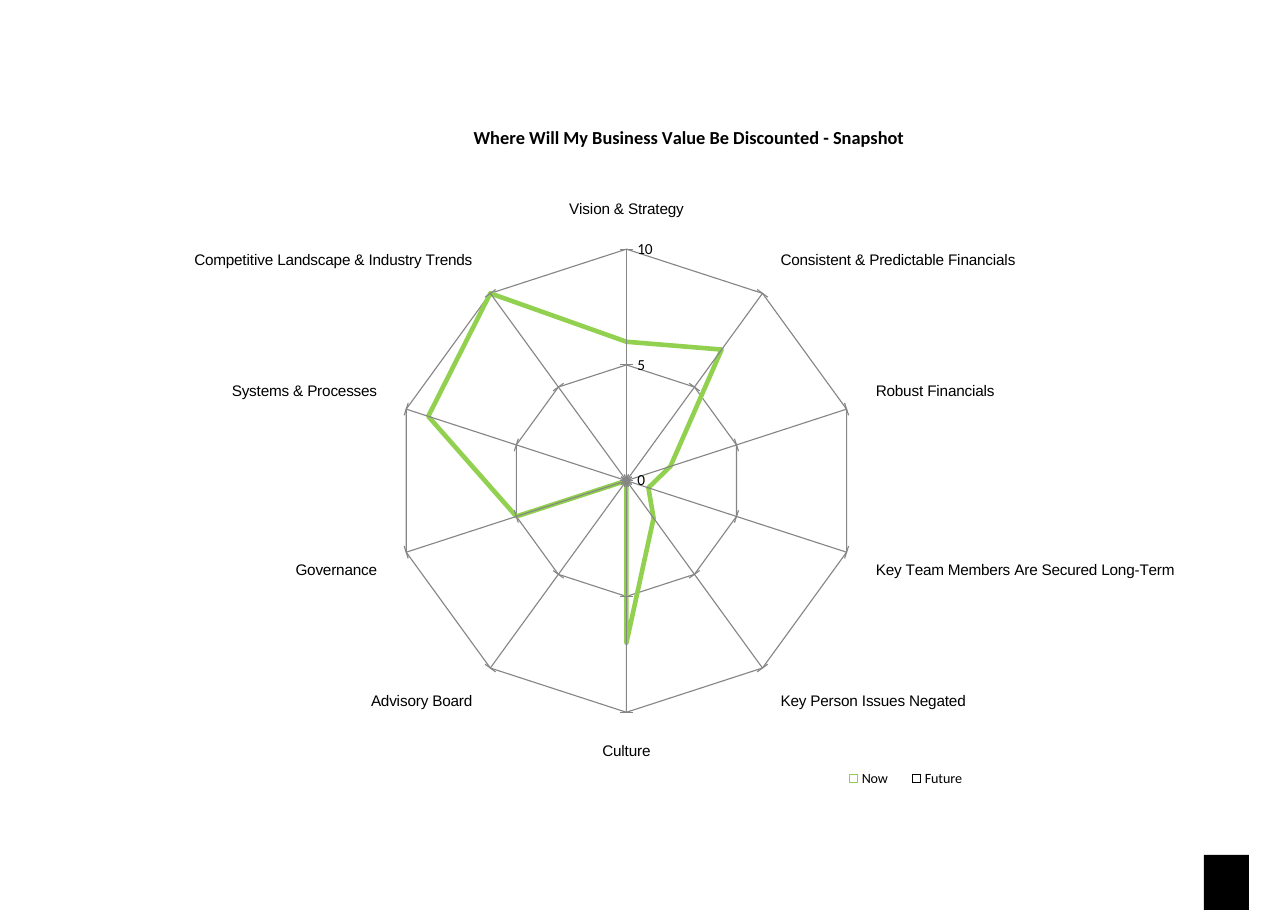
from lxml import etree
from pptx import Presentation
from pptx import util as u
from pptx.chart import data as chart_data
from pptx.dml import color
from pptx.enum import chart as charts, shapes
from pptx.oxml import ns

BLACK = "000000"
GREY = "868686"
GREEN = "92D050"

TOPICS = [
    "Vision & Strategy",
    "Consistent & Predictable Financials",
    "Robust Financials",
    "Key Team Members Are Secured Long-Term",
    "Key Person Issues Negated",
    "Culture",
    "Advisory Board",
    "Governance",
    "Systems & Processes",
    "Competitive Landscape & Industry Trends",
]
SCORES = {
    "Now": (GREEN, [6, 7, 2, 1, 2, 7, 0, 5, 9, 10]),
    "Future": (BLACK, [0] * len(TOPICS)),
}


def rgb(value):
    return color.RGBColor.from_string(value)


class SlideBuilder:
    font = "Calibri"
    label_font = "Arial"

    def __init__(self, presentation):
        self.slide = presentation.slides.add_slide(presentation.slide_layouts[6])

    def block(self, left, top, width, height, fill):
        shape = self.slide.shapes.add_shape(
            shapes.MSO_SHAPE.RECTANGLE,
            u.Cm(left), u.Cm(top), u.Cm(width), u.Cm(height))
        shape.shadow.inherit = False
        shape.fill.solid()
        shape.fill.fore_color.rgb = rgb(fill)
        shape.line.fill.background()

    def style_font(self, font, name, size, bold=False):
        font.name = name
        font.size = u.Pt(size)
        font.bold = bold
        font.color.rgb = rgb(BLACK)

    def style_line(self, line, line_color, width):
        line.color.rgb = rgb(line_color)
        line.width = u.Pt(width)

    def place(self, element, index, inner=False, **position):
        for old in element.findall(ns.qn("c:layout")):
            element.remove(old)
        layout = etree.Element(ns.qn("c:layout"))
        manual = etree.SubElement(layout, ns.qn("c:manualLayout"))
        settings = {"layoutTarget": "inner"} if inner else {}
        settings.update(xMode="edge", yMode="edge", **position)
        for tag, value in settings.items():
            etree.SubElement(manual, ns.qn("c:" + tag)).set("val", str(value))
        element.insert(index, layout)

    def style_axis(self, axis, tick, font_name):
        axis.has_major_gridlines = True
        axis.major_tick_mark = tick
        axis.minor_tick_mark = charts.XL_TICK_MARK.NONE
        self.style_line(axis.major_gridlines.format.line, GREY, 0.75)
        self.style_line(axis.format.line, GREY, 0.75)
        self.style_font(axis.tick_labels.font, font_name, 10)

    def radar(self, left, top, width, height, title, topics, scores):
        data = chart_data.CategoryChartData(number_format="General")
        data.categories = topics
        for name, (_, values) in scores.items():
            data.add_series(name, values)
        chart = self.slide.shapes.add_chart(
            charts.XL_CHART_TYPE.RADAR_FILLED,
            u.Cm(left), u.Cm(top), u.Cm(width), u.Cm(height), data).chart
        self.style_font(chart.font, self.font, 10)
        chart.plots[0].vary_by_categories = False
        for series, (line_color, _) in zip(chart.plots[0].series, scores.values()):
            series.format.fill.background()
            self.style_line(series.format.line, line_color, 3)

        self.style_axis(chart.category_axis, charts.XL_TICK_MARK.OUTSIDE, self.label_font)
        axis = chart.value_axis
        self.style_axis(axis, charts.XL_TICK_MARK.CROSS, self.font)
        axis.minimum_scale, axis.maximum_scale, axis.major_unit = 0, 10, 5

        chart.has_title = True
        chart.chart_title.text_frame.text = title
        paragraph = chart.chart_title.text_frame.paragraphs[0]
        self.style_font(paragraph.font, self.font, 12, bold=True)

        chart.has_legend = True
        legend = chart.legend
        legend.position = charts.XL_LEGEND_POSITION.RIGHT
        legend.include_in_layout = False
        self.style_font(legend.font, self.font, 9.2)

        plot_area = chart.plots[0]._element.getparent()
        self.place(plot_area, 0, inner=True, x=0.207, y=0.217, w=0.553, h=0.641)
        self.place(chart.chart_title._element, 1, x=0.34, y=0.04)
        self.place(legend._element, 1, x=0.67, y=0.93, w=0.14, h=0.04)


def main():
    presentation = Presentation()
    presentation.slide_width = u.Cm(29.7)
    presentation.slide_height = u.Cm(20.98)
    builder = SlideBuilder(presentation)
    builder.block(27.76, 19.71, 1.04, 1.27, BLACK)
    builder.radar(2.31, 2.13, 25.1, 16.66,
                  "Where Will My Business Value Be Discounted - Snapshot",
                  TOPICS, SCORES)
    presentation.save("out.pptx")


if __name__ == "__main__":
    main()
